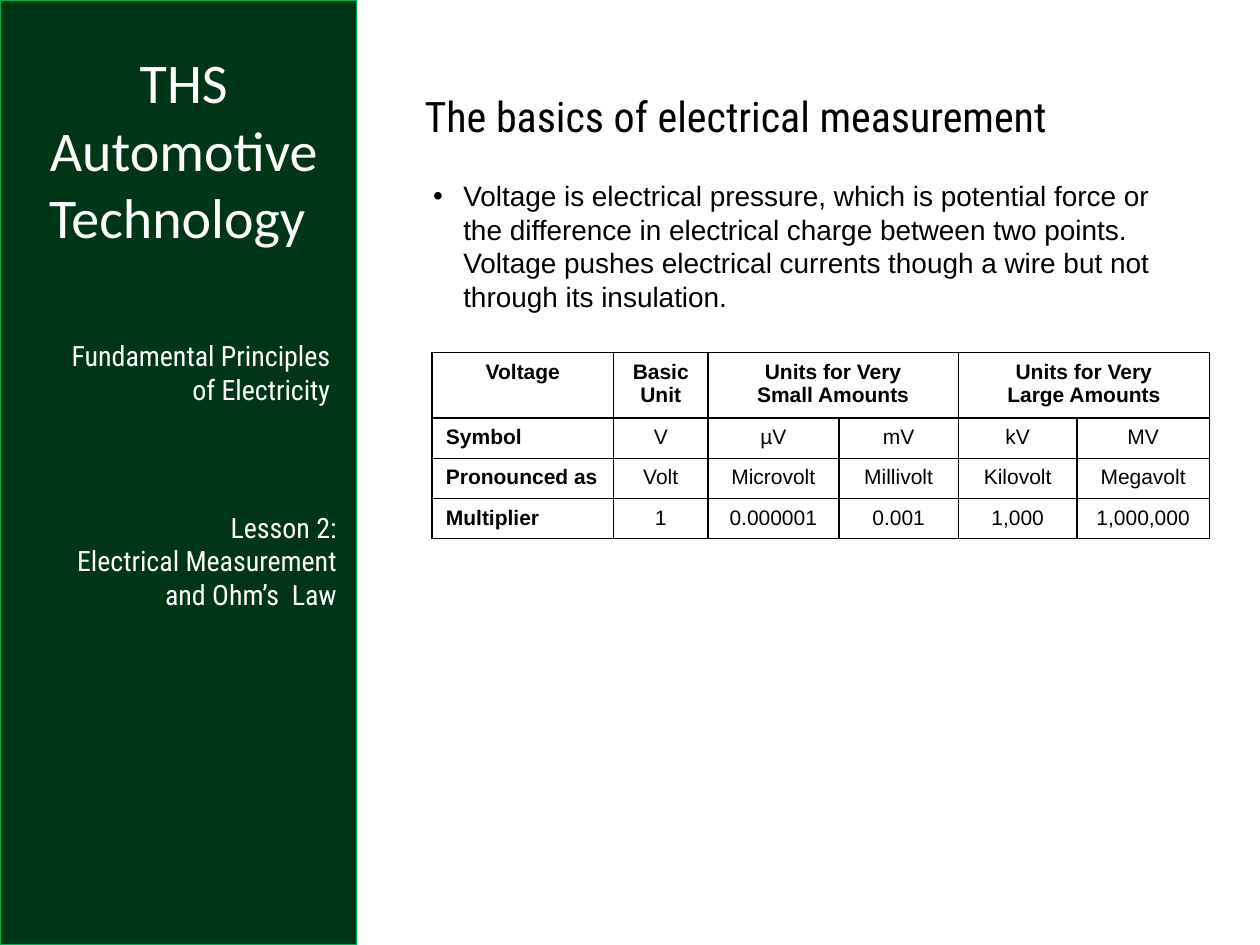
import pptx
import pptx.util
import pptx.dml.color
import pptx.enum.shapes
import pptx.enum.text
import pptx.oxml
import pptx.oxml.ns

Cm, Pt = pptx.util.Cm, pptx.util.Pt
ALIGN = pptx.enum.text.PP_ALIGN
HUES = {"side": "003618", "edge": "00B050", "pale": "FFFFFF", "ink": "000000"}
LABEL, BODY = "Roboto Condensed", "Arial"
NS = pptx.oxml.ns.nsdecls("a")

HEADS = [(0, 1, "Voltage"), (1, 1, "Basic Unit"),
         (2, 2, "Units for Very\nSmall Amounts"),
         (4, 2, "Units for Very\nLarge Amounts")]
ROWS = [["Symbol", "V", "µV", "mV", "kV", "MV"],
        ["Pronounced as", "Volt", "Microvolt", "Millivolt", "Kilovolt", "Megavolt"],
        ["Multiplier", "1", "0.000001", "0.001", "1,000", "1,000,000"]]
COLS = [3.66, 1.9, 2.64, 2.41, 2.39, 2.67]
TALL, LOW = 1.32, 0.81


def hue(name):
    return pptx.dml.color.RGBColor.from_string(HUES[name])


def fill_text(frame, text, size, font, ink, align, bold=False):
    frame.text = text
    for para in frame.paragraphs:
        para.alignment = align
        for run in para.runs:
            run.font.size, run.font.name = Pt(size), font
            run.font.bold, run.font.color.rgb = bold, hue(ink)


def add_text(slide, box, text, size, font, ink, align, wrap=True):
    frame = slide.shapes.add_textbox(*map(Cm, box)).text_frame
    frame.word_wrap = wrap
    fill_text(frame, text, size, font, ink, align)
    return frame


def add_side(slide, box):
    """Draw the course panel with its name, unit and lesson."""
    x, y, w, h = box
    panel = slide.shapes.add_shape(
        pptx.enum.shapes.MSO_SHAPE.RECTANGLE, *map(Cm, box))
    panel.shadow.inherit = False
    panel.fill.solid()
    panel.fill.fore_color.rgb = hue("side")
    panel.line.color.rgb = hue("edge")
    panel.line.width = Pt(0.75)
    add_text(slide, (x + 0.43, y + 0.84, 6.55, 4.37),
             "THS Automotive Technology ", 32, "Calibri", "pale", ALIGN.CENTER)
    add_text(slide, (x + 0.91, y + 6.7, 6, 1.6),
             "Fundamental Principles\nof Electricity",
             16, LABEL, "pale", ALIGN.RIGHT, False)
    add_text(slide, (x + 0.99, y + 10.16, 6.05, 2.29),
             "Lesson 2:\nElectrical Measurement\nand Ohm’s  Law",
             16, LABEL, "pale", ALIGN.RIGHT, False)


def set_title(slide, box, text):
    title = slide.shapes.title
    title.left, title.top, title.width, title.height = map(Cm, box)
    frame = title.text_frame
    frame.auto_size = pptx.enum.text.MSO_AUTO_SIZE.NONE
    frame.vertical_anchor = pptx.enum.text.MSO_ANCHOR.TOP
    frame.margin_left = Cm(0.56)
    fill_text(frame, text, 24, LABEL, "ink", ALIGN.LEFT)


def add_point(slide, box, text):
    frame = add_text(slide, box, text, 16, BODY, "ink", ALIGN.LEFT)
    props = frame.paragraphs[0]._p.get_or_add_pPr()
    props.set("marL", str(Cm(0.94)))
    props.set("indent", str(-Cm(0.61)))
    props.append(pptx.oxml.parse_xml(f'<a:buFont {NS} typeface="{BODY}"/>'))
    props.append(pptx.oxml.parse_xml(f'<a:buChar {NS} char="•"/>'))


def style_cell(cell):
    cell.margin_left = cell.margin_right = Cm(0.28)
    cell.margin_top = cell.margin_bottom = Cm(0.15)
    props = cell._tc.get_or_add_tcPr()
    for side in "LRTB":
        props.append(pptx.oxml.parse_xml(
            f'<a:ln{side} {NS} w="{Pt(1)}"><a:solidFill>'
            f'<a:srgbClr val="{HUES["ink"]}"/></a:solidFill></a:ln{side}>'))
    cell.fill.background()


def add_units(slide, x, y):
    """Place the table of voltage units with its corner at x, y."""
    tall = TALL + LOW * len(ROWS)
    table = slide.shapes.add_table(
        len(ROWS) + 1, len(COLS), Cm(x), Cm(y), Cm(sum(COLS)), Cm(tall)).table
    table.first_row = table.horz_banding = False
    for col, wide in zip(table.columns, COLS):
        col.width = Cm(wide)
    for i, row in enumerate(table.rows):
        row.height = Cm(LOW if i else TALL)
    for cell in table.iter_cells():
        style_cell(cell)
    for c, span, text in HEADS:
        cell = table.cell(0, c)
        if span > 1:
            cell.merge(table.cell(0, c + span - 1))
        fill_text(cell.text_frame, text, 12, BODY, "ink", ALIGN.CENTER, True)
    for r, row in enumerate(ROWS, 1):
        for c, text in enumerate(row):
            fill_text(table.cell(r, c).text_frame, text, 12, BODY, "ink",
                      ALIGN.CENTER if c else ALIGN.LEFT, c == 0)


def main():
    deck = pptx.Presentation()
    deck.slide_width, deck.slide_height = Cm(25.4), Cm(19.05)
    slide = deck.slides.add_slide(deck.slide_layouts[5])
    add_side(slide, (0, 0, 7.19, 19.05))
    set_title(slide, (8, 1.7, 16.18, 1.3), "The basics of electrical measurement")
    add_point(slide, (8.15, 3.48, 15.9, 2.97),
              "Voltage is electrical pressure, which is potential force or the "
              "difference in electrical charge between two points. Voltage pushes "
              "electrical currents though a wire but not through its insulation.")
    add_units(slide, 8.71, 7.11)
    deck.save("out.pptx")


if __name__ == "__main__":
    main()
